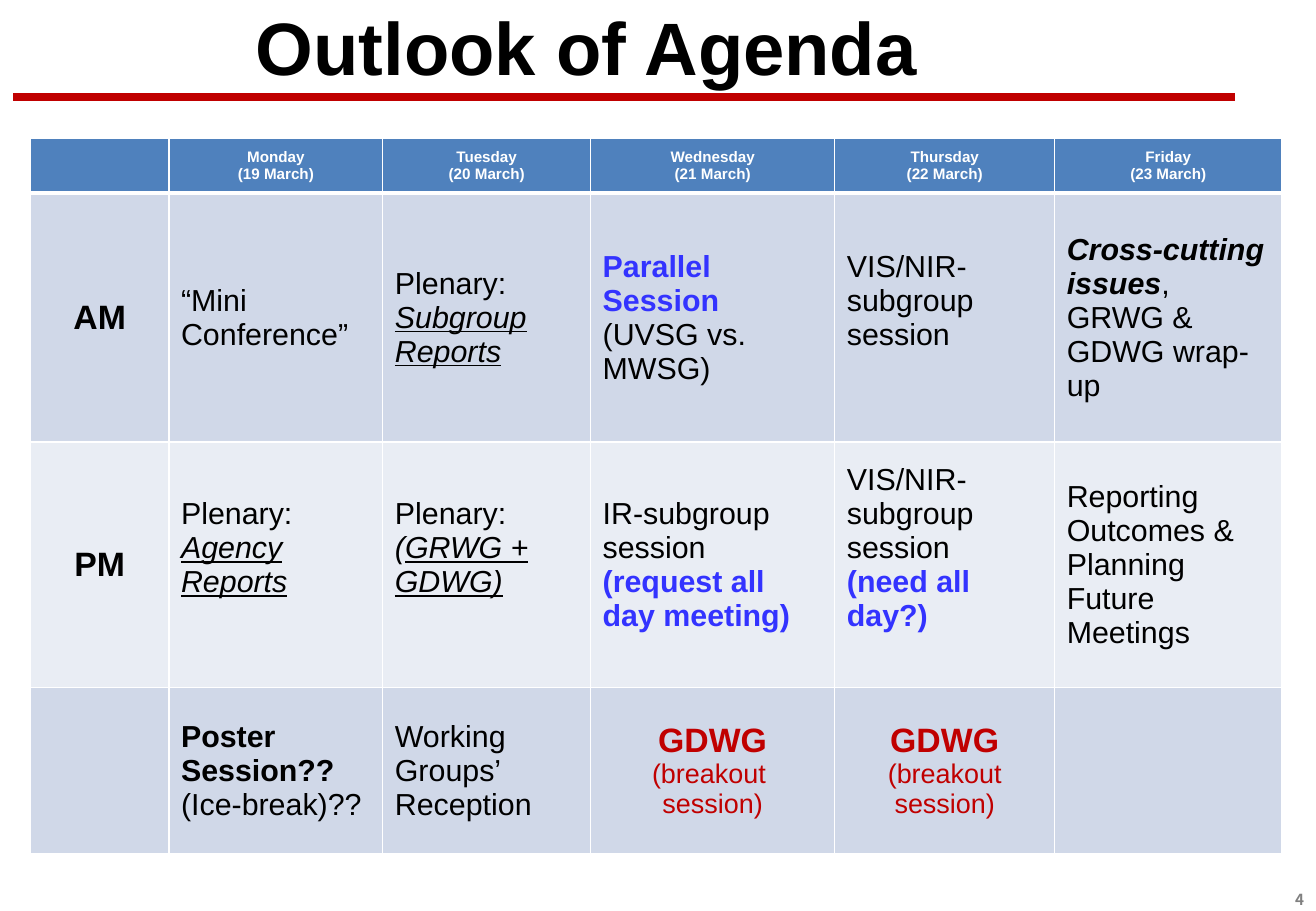
from lxml.etree import SubElement
from pptx import Presentation
from pptx.dml.color import RGBColor
from pptx.enum.shapes import MSO_CONNECTOR
from pptx.enum.text import MSO_ANCHOR, MSO_AUTO_SIZE, PP_ALIGN
from pptx.oxml.ns import qn
from pptx.util import Inches, Pt

INK, WHITE, RED, BLUE, GREY = "000000", "FFFFFF", "C00000", "3333FF", "808080"
HEAD, BANDS = "4F81BD", ("D0D8E8", "E9EDF4")
LOOKS = {
    "plain": dict(),
    "bold": dict(bold=True),
    "slant": dict(italic=True),
    "under": dict(italic=True, line=True),
    "cross": dict(bold=True, italic=True),
    "key": dict(bold=True, tint=BLUE),
    "head": dict(size=9, bold=True, tint=WHITE, mid=True),
    "side": dict(size=20, bold=True, mid=True),
    "loud": dict(size=20, bold=True, tint=RED, mid=True),
    "soft": dict(size=16, tint=RED, mid=True),
    "title": dict(size=44, bold=True, mid=True),
    "page": dict(size=9, bold=True, tint=GREY, face="Noto Sans CJK KR"),
}
COLS = (10.53, 16.25, 15.79, 18.56, 16.71, 17.27)
ROWS = (6, 27.33, 26.93, 18.27)
DAYS = ("Monday", "Tuesday", "Wednesday", "Thursday", "Friday")
VIS = [("VIS/NIR-subgroup session", "plain")]
AGENDA = [
    [[]] + [[[(day, "head")], [(f"({date} March)", "head")]]
            for date, day in enumerate(DAYS, 19)],
    [
        [[("AM", "side")]],
        [[("“Mini Conference”", "plain")]],
        [[("Plenary: ", "plain"), ("Subgroup Reports", "under")]],
        [[("Parallel Session", "key"), (" (UVSG vs. MWSG)", "plain")]],
        [VIS],
        [[("Cross-cutting issues", "cross"), (", GRWG & GDWG wrap-up", "plain")]],
    ],
    [
        [[("PM", "side")]],
        [[("Plenary: ", "plain"), ("Agency Reports", "under")]],
        [[("Plenary: ", "plain"), ("(", "slant"), ("GRWG + GDWG)", "under")]],
        [[("IR-subgroup session", "plain")], [("(request all day meeting)", "key")]],
        [VIS, [("(need all day?)", "key")]],
        [[("Reporting Outcomes & Planning Future Meetings", "plain")]],
    ],
    [
        [],
        [[("Poster Session??", "bold")], [("(Ice-break)??", "plain")]],
        [[("Working Groups’ Reception", "plain")]],
        [[("GDWG", "loud")], [("(breakout ", "soft")], [("session)", "soft")]],
        [[("GDWG", "loud")], [("(breakout session)", "soft")]],
        [],
    ],
]
RAISED = {(1, 4), (2, 1), (2, 2), (2, 4)}


def shade(code):
    return RGBColor.from_string(code)


class Deck:
    """Builds one slide with lengths in percent of its width and height."""

    def __init__(self, wide, high):
        self.file = Presentation()
        self.file.slide_width, self.file.slide_height = Inches(wide), Inches(high)
        self.slide = self.file.slides.add_slide(self.file.slide_layouts[5])

    def across(self, share):
        return round(self.file.slide_width * share / 100)

    def down(self, share):
        return round(self.file.slide_height * share / 100)

    def place(self, x, y, w, h):
        return self.across(x), self.down(y), self.across(w), self.down(h)

    def style(self, run, size=18, bold=False, italic=False, line=False,
              tint=INK, face="Arial", mid=False):
        font = run.font
        font.name, font.size = face, Pt(size)
        font.bold, font.italic, font.underline = bold, italic, line
        font.color.rgb = shade(tint)

    def title(self, text, *area):
        box = self.slide.shapes.title
        box.left, box.top, box.width, box.height = self.place(*area)
        frame = box.text_frame
        frame.text = text
        frame.auto_size = MSO_AUTO_SIZE.NONE
        frame.vertical_anchor = MSO_ANCHOR.MIDDLE
        frame.paragraphs[0].alignment = PP_ALIGN.CENTER
        self.style(frame.paragraphs[0].runs[0], **LOOKS["title"])

    def label(self, text, *area):
        frame = self.slide.shapes.add_textbox(*self.place(*area)).text_frame
        frame.word_wrap = True
        frame.text = text
        frame.paragraphs[0].alignment = PP_ALIGN.RIGHT
        self.style(frame.paragraphs[0].runs[0], **LOOKS["page"])

    def rule(self, x, y, end, tint, width):
        line = self.slide.shapes.add_connector(
            MSO_CONNECTOR.STRAIGHT, self.across(x), self.down(y),
            self.across(end), self.down(y))
        line.line.color.rgb, line.line.width = shade(tint), Pt(width)
        SubElement(line._element.spPr, qn("a:effectLst"))

    def edge(self, cell, row):
        props = cell._tc.get_or_add_tcPr()
        thick = {"T": 3 if row == 1 else 1, "B": 3 if row == 0 else 1}
        for side in "LRTB":
            line = SubElement(props, qn(f"a:ln{side}"), w=str(Pt(thick.get(side, 1))))
            fill = SubElement(line, qn("a:solidFill"))
            SubElement(fill, qn("a:srgbClr"), val=WHITE)

    def fill(self, cell, parts):
        frame = cell.text_frame
        for at, runs in enumerate(parts):
            para = frame.add_paragraph() if at else frame.paragraphs[0]
            for text, look in runs:
                run = para.add_run()
                run.text = text
                self.style(run, **LOOKS[look])
                mid = LOOKS[look].get("mid")
                para.alignment = PP_ALIGN.CENTER if mid else PP_ALIGN.LEFT

    def table(self, x, y, cols, rows, data, raised):
        area = self.place(x, y, sum(cols), sum(rows))
        grid = self.slide.shapes.add_table(len(rows), len(cols), *area).table
        for col, share in zip(grid.columns, cols):
            col.width = self.across(share)
        for at, (row, share) in enumerate(zip(grid.rows, rows)):
            row.height = self.down(share)
            for col, parts in enumerate(data[at]):
                cell = grid.cell(at, col)
                self.edge(cell, at)
                cell.fill.solid()
                cell.fill.fore_color.rgb = shade(BANDS[(at - 1) % 2] if at else HEAD)
                cell.vertical_anchor = MSO_ANCHOR.MIDDLE
                if (at, col) in raised:
                    cell.margin_bottom = self.down(4.4)
                self.fill(cell, parts)


def main():
    deck = Deck(10.83, 7.5)
    deck.rule(1.02, 10.67, 93.81, RED, 4.5)
    deck.label("4", 91.41, 97.07, 8.59, 3.33)
    deck.title("Outlook of Agenda", 1.48, 1.07, 86.24, 8)
    deck.table(2.31, 15.2, COLS, ROWS, AGENDA, RAISED)
    deck.file.save("out.pptx")


if __name__ == "__main__":
    main()
